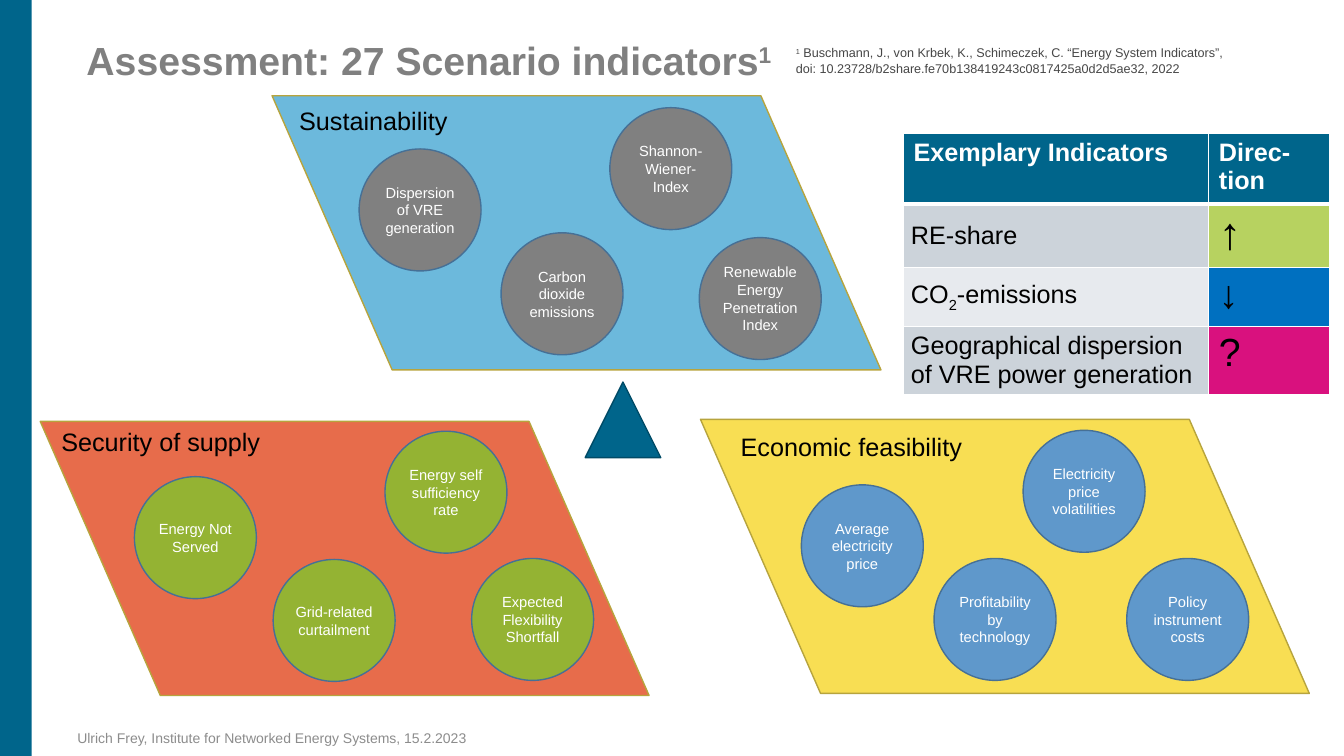
from lxml import etree
from pptx import Presentation
from pptx.dml.color import RGBColor
from pptx.enum import shapes, text
from pptx.oxml import ns
from pptx.util import Pt

FONT = "Arial"
WHITE = RGBColor(0xFF, 0xFF, 0xFF)
BLACK = RGBColor(0x00, 0x00, 0x00)
TEAL = RGBColor(0x00, 0x65, 0x8B)
DARK_TEAL = RGBColor(0x00, 0x4B, 0x67)
GRAY = RGBColor(0x80, 0x80, 0x80)
FOOTER_GRAY = RGBColor(0x8C, 0x8C, 0x8C)
NOTE_GRAY = RGBColor(0x46, 0x46, 0x46)
OLIVE = RGBColor(0xB7, 0xA4, 0x3D)
STEEL = RGBColor(0x46, 0x70, 0x96)
YELLOW = RGBColor(0xF8, 0xDE, 0x53)
BLUE = RGBColor(0x5F, 0x98, 0xCB)
SKY = RGBColor(0x6C, 0xB9, 0xDC)
ORANGE = RGBColor(0xE7, 0x6C, 0x4B)
GREEN = RGBColor(0x94, 0xB3, 0x33)
LIME = RGBColor(0xB7, 0xD2, 0x60)
STRONG_BLUE = RGBColor(0x00, 0x70, 0xC0)
MAGENTA = RGBColor(0xD9, 0x11, 0x7E)
BAND_DARK = RGBColor(0xCC, 0xD3, 0xDA)
BAND_LIGHT = RGBColor(0xE7, 0xEA, 0xEE)

# A run is (wording, baseline shift in percent); a paragraph is a list of runs.
TITLE = [("Assessment: 27 Scenario indicators", 0), ("1", 30)]
REFERENCE = [("1", 30), (" Buschmann, J., von Krbek, K., Schimeczek, C. “Energy System Indicators”, "
                         "doi: 10.23728/b2share.fe70b138419243c0817425a0d2d5ae32, 2022", 0)]
FOOTER = [("Ulrich Frey, Institute for Networked Energy Systems, 15.2.2023", 0)]

# heading, heading box (left, top, width), panel corner, panel fill, circle fill, circles
PANELS = [
    ("Economic feasibility", (522, 304.6, 174.2), (500.4, 299.5), YELLOW, BLUE, [
        ("Electricity price volatilities", 730.8, 307.4),
        ("Average electricity price", 572.4, 346.3),
        ("Profitability by technology", 667.2, 398.9),
        ("Policy instrument costs", 804.8, 398.9)]),
    ("Sustainability", (206.6, 72, 121.7), (194.4, 68.4), SKY, GRAY, [
        ("Dispersion of VRE generation", 256.5, 106.4),
        ("Carbon dioxide emissions", 357.9, 166.3),
        ("Renewable Energy Penetration Index", 499.5, 169.7),
        ("Shannon-Wiener-Index", 435.6, 76.9)]),
    ("Security of supply", (36.7, 301, 157.7), (28.8, 301), ORANGE, GREEN, [
        ("Expected Flexibility Shortfall", 336.9, 398.9),
        ("Grid-related curtailment", 195.1, 399.6),
        ("Energy Not Served", 96, 340.5),
        ("Energy self sufficiency rate", 275, 308)]),
]
PANEL_SIZE = (434.9, 195.8)
PANEL_SLANT = 0.438
CIRCLE_SIZE = (87.1, 87.1)

TABLE_HEADER = ["Exemplary Indicators", "Direc-tion"]
# indicator paragraphs, row fill, direction sign, sign size, sign fill
TABLE_ROWS = [
    ([[("RE-share", 0)]], BAND_DARK, "↑", 32, LIME),
    ([[("CO", 0), ("2", -25), ("-emissions", 0)]], BAND_LIGHT, "↓", 28, STRONG_BLUE),
    ([[("Geographical dispersion", 0)], [("of VRE power generation", 0)]],
     BAND_DARK, "?", 28, MAGENTA),
]
TABLE_CORNER = (645.3, 95.2)
COLUMN_WIDTHS = (218.2, 86.4)
ROW_HEIGHT = 41.8


def write(frame, paragraphs, size, color, bold=False, align=None):
    for index, runs in enumerate(paragraphs):
        paragraph = frame.paragraphs[0] if index == 0 else frame.add_paragraph()
        paragraph.alignment = align
        for wording, baseline in runs:
            run = paragraph.add_run()
            run.text = wording
            run.font.name = FONT
            run.font.size = Pt(size)
            run.font.bold = bold
            run.font.color.rgb = color
            if baseline:
                run._r.get_or_add_rPr().set("baseline", str(baseline * 1000))


def add_text(slide, box, runs, size, color, bold=False, wrap=True):
    frame = slide.shapes.add_textbox(*map(Pt, box)).text_frame
    frame.word_wrap = wrap
    write(frame, [runs], size, color, bold)
    return frame


def add_shape(slide, kind, corner, size, fill, line=None):
    shape = slide.shapes.add_shape(kind, *map(Pt, corner + size))
    shape.shadow.inherit = False
    shape.fill.solid()
    shape.fill.fore_color.rgb = fill
    if line is None:
        shape.line.fill.background()
    else:
        shape.line.color.rgb = line
        shape.line.width = Pt(1)
    return shape


def add_panel(slide, heading, heading_box, corner, fill, circle_fill, circles):
    panel = add_shape(slide, shapes.MSO_SHAPE.PARALLELOGRAM, corner, PANEL_SIZE, fill, OLIVE)
    panel.adjustments[0] = PANEL_SLANT
    panel._element.spPr.xfrm.set("flipH", "1")
    add_text(slide, heading_box + (29,), [(heading, 0)], 18, BLACK, wrap=False)
    for label, left, top in circles:
        circle = add_shape(slide, shapes.MSO_SHAPE.OVAL, (left, top), CIRCLE_SIZE,
                           circle_fill, STEEL)
        frame = circle.text_frame
        frame.word_wrap = True
        frame.vertical_anchor = text.MSO_ANCHOR.MIDDLE
        frame.margin_left = frame.margin_right = Pt(2.83)
        frame.margin_top = frame.margin_bottom = Pt(2.83)
        write(frame, [[(label, 0)]], 10.5, WHITE, align=text.PP_ALIGN.CENTER)


def style_cell(cell, fill, top=1, bottom=1):
    """Give the cell white borders and a solid fill."""
    properties = cell._tc.get_or_add_tcPr()
    for side, width in (("L", 1), ("R", 1), ("T", top), ("B", bottom)):
        border = etree.SubElement(properties, ns.qn(f"a:ln{side}"), w=str(Pt(width)))
        solid = etree.SubElement(border, ns.qn("a:solidFill"))
        etree.SubElement(solid, ns.qn("a:srgbClr"), val=str(WHITE))
    cell.fill.solid()
    cell.fill.fore_color.rgb = fill


def add_indicator_table(slide):
    row_count = len(TABLE_ROWS) + 1
    size = (sum(COLUMN_WIDTHS), row_count * ROW_HEIGHT)
    table = slide.shapes.add_table(row_count, len(COLUMN_WIDTHS),
                                   *map(Pt, TABLE_CORNER + size)).table
    for column, width in zip(table.columns, COLUMN_WIDTHS):
        column.width = Pt(width)
    for index, heading in enumerate(TABLE_HEADER):
        cell = table.cell(0, index)
        style_cell(cell, TEAL, bottom=3)
        write(cell.text_frame, [[(heading, 0)]], 18, WHITE, bold=True)
    for row, (indicator, fill, sign, sign_size, sign_fill) in enumerate(TABLE_ROWS, 1):
        top = 3 if row == 1 else 1
        name_cell, sign_cell = table.cell(row, 0), table.cell(row, 1)
        style_cell(name_cell, fill, top)
        name_cell.vertical_anchor = text.MSO_ANCHOR.MIDDLE
        name_cell.margin_left = name_cell.margin_right = Pt(5.4)
        name_cell.margin_top = name_cell.margin_bottom = Pt(2.7)
        write(name_cell.text_frame, indicator, 18, BLACK)
        style_cell(sign_cell, sign_fill, top)
        write(sign_cell.text_frame, [[(sign, 0)]], sign_size, BLACK)


def main():
    presentation = Presentation()
    presentation.slide_width, presentation.slide_height = Pt(960), Pt(540)
    slide = presentation.slides.add_slide(presentation.slide_layouts[6])
    add_text(slide, (48.2, 517.7, 324, 20), FOOTER, 10, FOOTER_GRAY)
    add_shape(slide, shapes.MSO_SHAPE.RECTANGLE, (0, 0), (22.6, 540), TEAL)
    title = add_text(slide, (54.7, 25.9, 792, 77.8), TITLE, 28, GRAY, bold=True)
    title.paragraphs[0].line_spacing = 0.9
    add_shape(slide, shapes.MSO_SHAPE.FLOWCHART_EXTRACT, (418, 272.9), (54, 54), TEAL, DARK_TEAL)
    add_text(slide, (561.4, 28.8, 323.3, 28.8), REFERENCE, 9, NOTE_GRAY)
    for panel in PANELS:
        add_panel(slide, *panel)
    add_indicator_table(slide)
    presentation.save("out.pptx")


if __name__ == "__main__":
    main()
